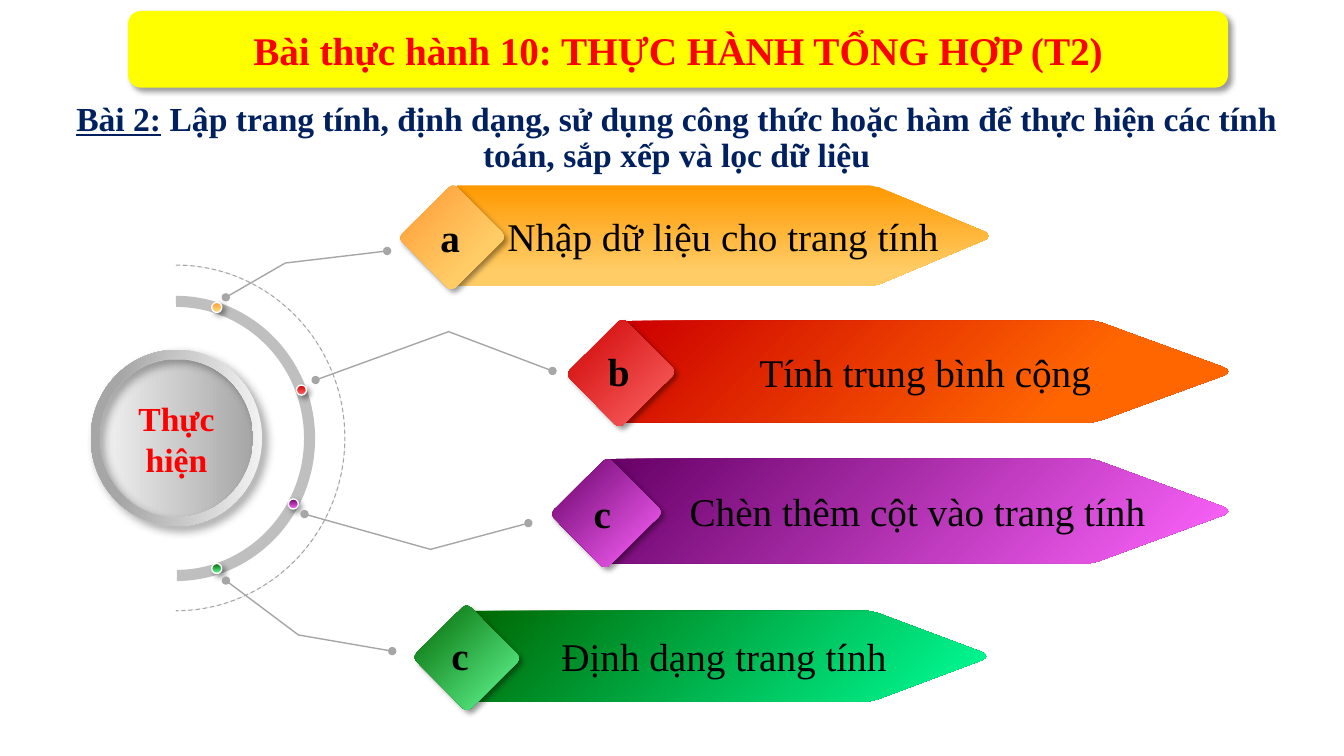
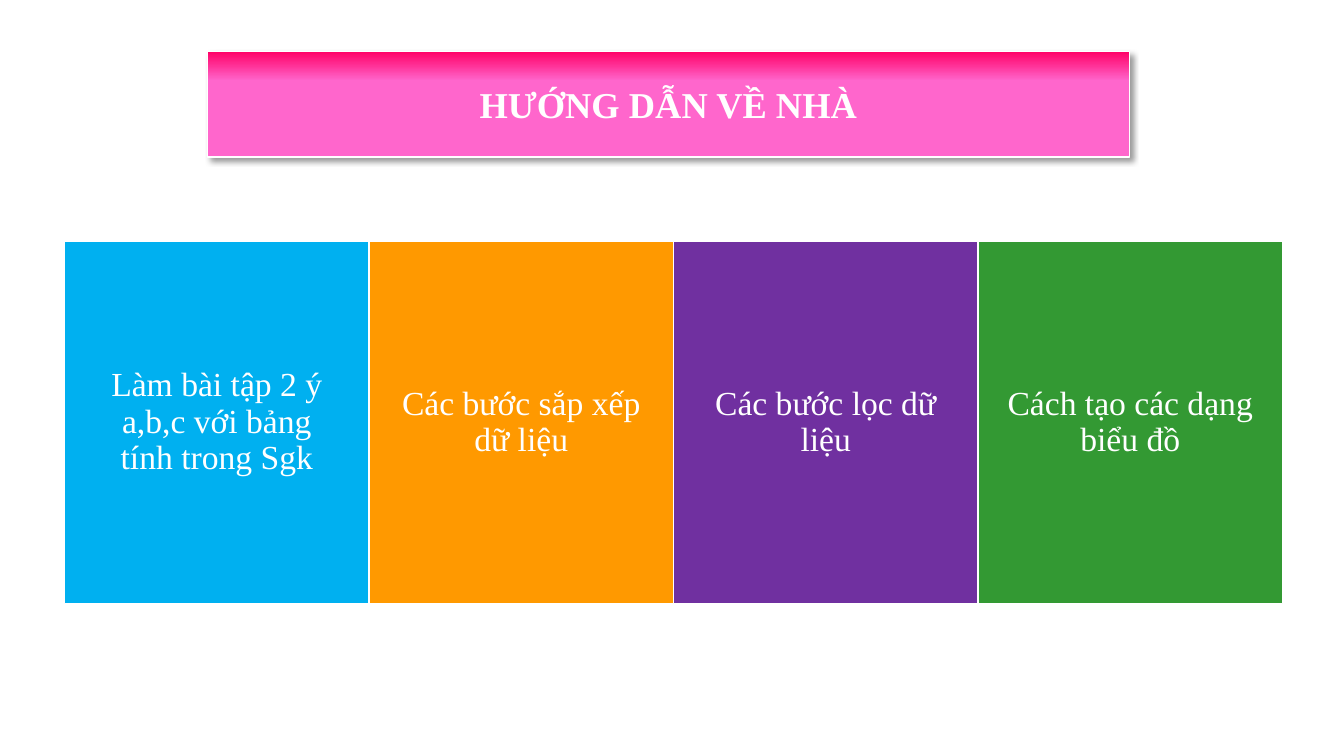
from typing import NamedTuple, Optional

from lxml import etree
from pptx import Presentation
from pptx.dml.color import RGBColor
from pptx.enum.dml import MSO_LINE
from pptx.enum.shapes import MSO_SHAPE
from pptx.enum.text import MSO_ANCHOR, MSO_AUTO_SIZE, PP_ALIGN
from pptx.oxml.ns import qn
from pptx.util import Inches, Pt

DASH = MSO_LINE.DASH
ELLIPSE, DONUT, ARC = MSO_SHAPE.OVAL, MSO_SHAPE.DONUT, MSO_SHAPE.BLOCK_ARC
RECTANGLE, ROUNDED = MSO_SHAPE.RECTANGLE, MSO_SHAPE.ROUNDED_RECTANGLE
MIDDLE, TOP = MSO_ANCHOR.MIDDLE, MSO_ANCHOR.TOP
CENTER, LEFT = PP_ALIGN.CENTER, PP_ALIGN.LEFT
NO_AUTOFIT = MSO_AUTO_SIZE.NONE
TITLE_ONLY = 5

FONT = "Times New Roman"
COLORS = {
    "black": "000000", "white": "FFFFFF", "red": "FF0000", "navy": "002060",
    "yellow": "FFFF00", "grey": "A6A6A6", "ring": "BFBFBF", "silver": "F2F2F2",
    "orange": "FF9900", "peach": "FF9933", "sand": "FFCC66",
    "crimson": "CC0000", "flame": "FF6600", "coral": "FF6A6A",
    "plum": "660066", "orchid": "FF66FF",
    "forest": "006600", "spring": "00FF99", "mint": "66FF99",
    "rose": "FF0066", "pink": "FF66CC",
    "sky": "00B0F0", "violet": "7030A0", "leaf": "339933",
}


class Box(NamedTuple):
    left: float
    top: float
    width: float
    height: float


class Gradient(NamedTuple):
    start: str
    end: str
    end_percent: int = 100
    clockwise_angle: int = 90


class Shadow(NamedTuple):
    blur: float = 4
    distance: float = 3


class Task(NamedTuple):
    letter: str
    text: str
    ribbon: Box
    shoulder: float
    ribbon_fill: Gradient
    diamond: Box
    letter_at: tuple[float, float]
    accent: Gradient
    bead_at: tuple[float, float]
    leader: list[tuple[float, float]]


class Homework(NamedTuple):
    text: str
    color: str


SOFT_SHADOW = Shadow()
TASKS = [
    Task("a", "Nhập dữ liệu cho trang tính",
         Box(4.53, 1.84, 5.28, 1), 8.63, Gradient("orange", "sand", 85),
         Box(4.1, 1.98, 0.77, 0.75), (4.27, 2.07),
         Gradient("peach", "sand", 71), (2.1, 3),
         [(2.24, 2.95), (2.83, 2.61), (3.84, 2.49)]),
    Task("b", "Tính trung bình cộng",
         Box(6.17, 3.18, 6.01, 1.01), 10.83,
         Gradient("crimson", "flame", 74, 45),
         Box(5.76, 3.32, 0.8, 0.76), (5.93, 3.4),
         Gradient("crimson", "coral"), (2.94, 3.82),
         [(3.13, 3.77), (4.45, 3.29), (5.48, 3.68)]),
    Task("c", "Chèn thêm cột vào trang tính",
         Box(6.02, 4.55, 6.16, 1.04), 10.8,
         Gradient("plum", "orchid", 100, 45),
         Box(5.61, 4.7, 0.81, 0.78), (5.79, 4.81),
         Gradient("plum", "orchid"), (2.86, 4.95),
         [(3.02, 5.1), (4.27, 5.45), (5.24, 5.19)]),
    Task("c", "Định dạng trang tính",
         Box(4.58, 6.06, 5.2, 0.9), 8.61,
         Gradient("forest", "spring", 100, 45),
         Box(4.25, 6.14, 0.76, 0.77), (4.38, 6.21),
         Gradient("forest", "mint"), (2.1, 5.59),
         [(2.24, 5.76), (2.96, 6.3), (3.89, 6.46)]),
]
HOMEWORK = [
    Homework("Làm bài tập 2 ý a,b,c với bảng tính trong Sgk", "sky"),
    Homework("Các bước sắp xếp dữ liệu", "orange"),
    Homework("Các bước lọc dữ liệu", "violet"),
    Homework("Cách tạo các dạng biểu đồ", "leaf"),
]


def rgb(name: str) -> RGBColor:
    return RGBColor.from_string(COLORS[name])


def inches(box: Box) -> list[int]:
    return [Inches(length) for length in box]


def paint(shape, fill: Optional[str | Gradient], line: Optional[str] = None,
          line_width: float = 1, shadow: Optional[Shadow] = None) -> None:
    """Set fill, outline and shadow; None means there is none."""
    if fill is None:
        shape.fill.background()
    elif isinstance(fill, Gradient):
        shape.fill.gradient()
        shape.fill.gradient_angle = (360 - fill.clockwise_angle) % 360
        first, last = shape.fill.gradient_stops
        first.color.rgb, first.position = rgb(fill.start), 0
        last.color.rgb, last.position = rgb(fill.end), fill.end_percent / 100
    else:
        shape.fill.solid()
        shape.fill.fore_color.rgb = rgb(fill)
    if line is None:
        shape.line.fill.background()
    else:
        shape.line.color.rgb = rgb(line)
        shape.line.width = Pt(line_width)
    shape.shadow.inherit = False
    if shadow:
        effects = shape._element.spPr.find(qn("a:effectLst"))
        outer = etree.SubElement(
            effects, qn("a:outerShdw"), blurRad=str(Pt(shadow.blur)),
            dist=str(Pt(shadow.distance)), dir=str(45 * 60000),
            algn="tl", rotWithShape="0")
        color = etree.SubElement(outer, qn("a:srgbClr"), val=COLORS["black"])
        etree.SubElement(color, qn("a:alpha"), val="40000")


def write(shape, runs: list[str], size: int, color: str, bold: bool = False,
          align=CENTER, anchor=MIDDLE, spacing: Optional[float] = None) -> None:
    frame = shape.text_frame
    frame.word_wrap = True
    frame.auto_size = NO_AUTOFIT
    frame.vertical_anchor = anchor
    paragraph = frame.paragraphs[0]
    for text in runs:
        paragraph.add_run().text = text
    paragraph.alignment = align
    if spacing:
        paragraph.line_spacing = spacing
    font = paragraph.font
    font.name, font.size, font.bold = FONT, Pt(size), bold
    font.color.rgb = rgb(color)


def add_preset(slide, preset, box: Box, fill: str | Gradient,
               adjustments: tuple[float, ...] = (), rotation: float = 0,
               **paint_options):
    shape = slide.shapes.add_shape(preset, *inches(box))
    for index, value in enumerate(adjustments):
        shape.adjustments[index] = value
    shape.rotation = rotation
    paint(shape, fill, **paint_options)
    return shape


def add_outline(slide, points: list[tuple[float, float]], close: bool):
    start, *rest = [(Inches(x), Inches(y)) for x, y in points]
    builder = slide.shapes.build_freeform(*start)
    builder.add_line_segments(rest, close=close)
    return builder.convert_to_shape()


def add_title(slide, box: Box):
    title = slide.shapes.title
    title.left, title.top, title.width, title.height = inches(box)
    return title


def add_ribbon(slide, task: Task) -> None:
    """Draw the pointed band with its softened tip, then the lettered diamond."""
    left, top, width, height = task.ribbon
    tip, bottom, middle = left + width, top + height, top + height / 2
    upper = [(left, top), (task.shoulder, top), (task.shoulder + 0.09, top + 0.02),
             (tip - 0.04, middle - 0.04), (tip - 0.01, middle - 0.02)]
    lower = [(x, top + bottom - y) for x, y in reversed(upper)]
    ribbon = add_outline(slide, upper + [(tip, middle)] + lower, close=True)
    paint(ribbon, task.ribbon_fill)
    write(ribbon, [task.text], 28, "black")
    add_preset(slide, ROUNDED, task.diamond, task.accent, (0.08,), 315.2,
               shadow=SOFT_SHADOW)
    letter = slide.shapes.add_textbox(*inches(Box(*task.letter_at, 0.43, 0.57)))
    write(letter, [task.letter], 28, "black", bold=True, align=LEFT, anchor=TOP)


def add_hub(slide) -> None:
    core = add_preset(slide, ELLIPSE, Box(0.99, 3.57, 1.52, 1.56),
                      Gradient("silver", "grey", 100, 0))
    write(core, ["Thực hiện"], 24, "red", bold=True)
    add_preset(slide, DONUT, Box(0.9, 3.47, 1.7, 1.75),
               Gradient("silver", "grey", 84, 180), (0.05,),
               shadow=Shadow(7, 5))
    add_preset(slide, ARC, Box(0.33, 2.97, 2.83, 2.76), "ring",
               (108, 215.75, 0.04), 90)
    orbit = add_preset(slide, ARC, Box(0.03, 2.67, 3.43, 3.35), "grey",
                       (108, 215.96, 0), 90, line="grey", line_width=0.75)
    orbit.line.dash_style = DASH


def add_leader(slide, task: Task) -> None:
    """Draw the bead on the ring and the bent line towards its ribbon."""
    add_preset(slide, ELLIPSE, Box(*task.bead_at, 0.1, 0.1), task.accent,
               line="white", shadow=SOFT_SHADOW)
    leader = add_outline(slide, task.leader, close=False)
    paint(leader, None, line="grey")
    line_xml = leader._element.spPr.find(qn("a:ln"))
    for end in ("a:headEnd", "a:tailEnd"):
        etree.SubElement(line_xml, qn(end), type="oval")


def build_practice(slide) -> None:
    title = add_title(slide, Box(0.39, 0.92, 12.64, 0.91))
    write(title, ["Bài 2:", " Lập trang tính, định dạng, sử dụng công thức hoặc hàm "
                  "để thực hiện các tính toán, sắp xếp và lọc dữ liệu"],
          24, "navy", bold=True, spacing=0.9)
    title.text_frame.paragraphs[0].runs[0].font.underline = True
    banner = add_preset(slide, ROUNDED, Box(1.27, 0.11, 10.91, 0.76), "yellow",
                        shadow=SOFT_SHADOW)
    write(banner, ["Bài thực hành 10: THỰC HÀNH TỔNG HỢP (T2)"], 28, "red", bold=True)
    add_hub(slide)
    for task in TASKS:
        add_ribbon(slide, task)
        add_leader(slide, task)


def build_homework(slide) -> None:
    title = add_title(slide, Box(2.06, 0.51, 9.14, 1.05))
    paint(title, Gradient("rose", "pink", 28), line="white", shadow=SOFT_SHADOW)
    write(title, ["HƯỚNG DẪN VỀ NHÀ"], 26, "white", bold=True)
    left, width = 0.64, 3.02
    for index, item in enumerate(HOMEWORK):
        panel = add_preset(slide, RECTANGLE,
                           Box(left + index * width, 2.39, width, 3.6),
                           item.color, line="white")
        write(panel, [item.text], 24, "white", spacing=0.9)
        frame = panel.text_frame
        frame.margin_left = frame.margin_right = Inches(0.27)
        frame.margin_top = frame.margin_bottom = Inches(0.27)


def main() -> None:
    deck = Presentation()
    deck.slide_width, deck.slide_height = Inches(13.33), Inches(7.5)
    for build in (build_practice, build_homework):
        build(deck.slides.add_slide(deck.slide_layouts[TITLE_ONLY]))
    deck.save("out.pptx")


if __name__ == "__main__":
    main()
